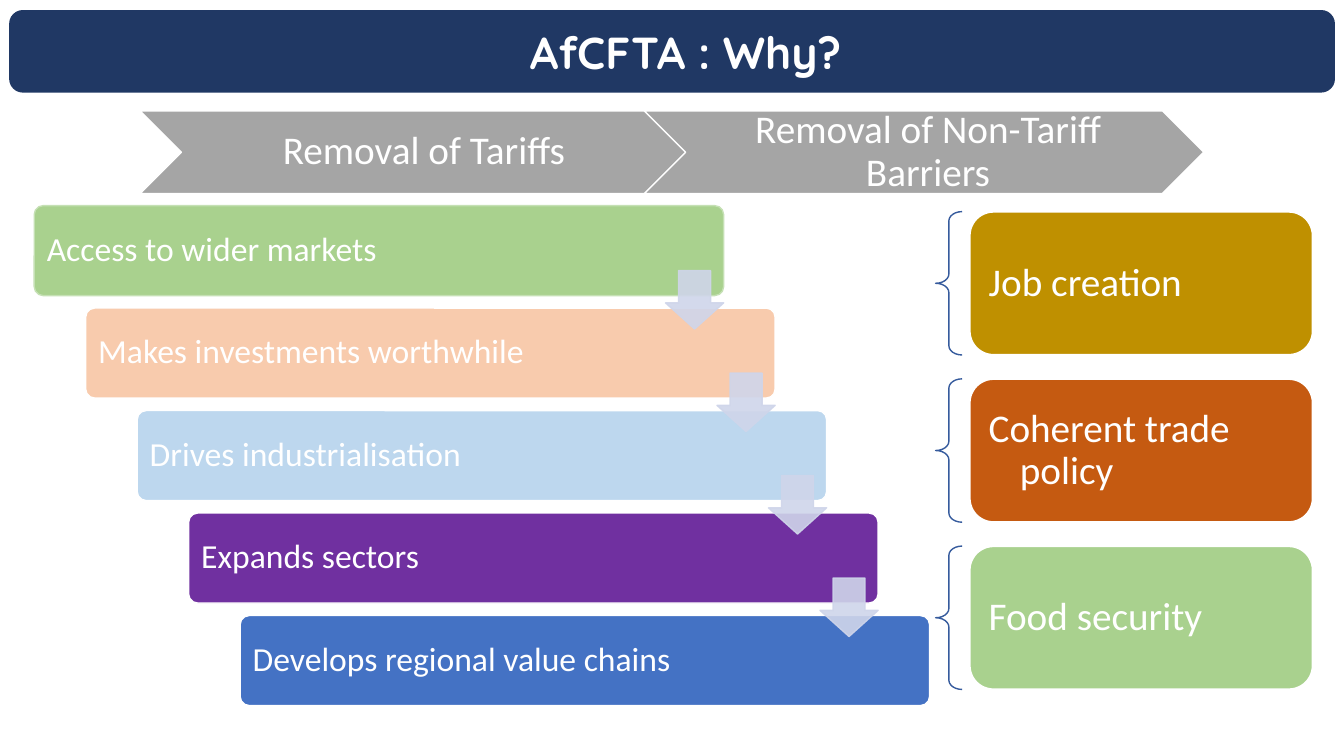
from pptx import Presentation
from pptx.dml.color import RGBColor
from pptx.enum.shapes import MSO_SHAPE
from pptx.enum.text import MSO_ANCHOR, PP_ALIGN
from pptx.oxml.ns import qn
from pptx.util import Inches, Pt
from lxml import etree

ROUND = MSO_SHAPE.ROUNDED_RECTANGLE
CHEVRON = MSO_SHAPE.CHEVRON
ARROW = MSO_SHAPE.DOWN_ARROW
BRACE = MSO_SHAPE.LEFT_BRACE
MIDDLE = MSO_ANCHOR.MIDDLE
LEFT, CENTER = PP_ALIGN.LEFT, PP_ALIGN.CENTER

WHITE = RGBColor(0xFF, 0xFF, 0xFF)
NAVY = RGBColor(0x20, 0x38, 0x64)
GRAY = RGBColor(0xA5, 0xA5, 0xA5)
GREEN = RGBColor(0xA9, 0xD1, 0x8E)
MINT = RGBColor(0xC5, 0xE0, 0xB4)
PEACH = RGBColor(0xF8, 0xCB, 0xAD)
SKY = RGBColor(0xBD, 0xD7, 0xEE)
PURPLE = RGBColor(0x70, 0x30, 0xA0)
BLUE = RGBColor(0x44, 0x72, 0xC4)
PALE = RGBColor(0xCF, 0xD5, 0xEA)
STEEL = RGBColor(0x36, 0x5B, 0x9D)
GOLD = RGBColor(0xBF, 0x90, 0x00)
RUST = RGBColor(0xC5, 0x5A, 0x11)

PAGE = (0, 0, 13.33, 7.5)


def part(box, left, top, width, height):
    """Return the box that takes the given shares of another box."""
    x, y, w, h = box
    return x + left * w, y + top * h, width * w, height * h


def draw(slide, kind, box, fill=None, line=None, weight=1, adjust=(), alpha=None):
    """Add a preset shape with its fill, outline and adjustments."""
    shape = slide.shapes.add_shape(kind, *map(Inches, box))
    shape.shadow.inherit = False
    for i, value in enumerate(adjust):
        shape.adjustments[i] = value
    if fill is None:
        shape.fill.background()
    else:
        shape.fill.solid()
        shape.fill.fore_color.rgb = fill
    if line is None:
        shape.line.fill.background()
    else:
        shape.line.color.rgb = line
        shape.line.width = Pt(weight)
    if alpha:
        for color in shape._element.spPr.iter(qn("a:srgbClr")):
            etree.SubElement(color, qn("a:alpha")).set("val", str(alpha * 1000))
    return shape


def write(shape, text, size=24, font="Calibri", bold=False, align=LEFT,
          inset=(0.1, 0.1, 0.1, 0.1), indent=(0, 0), spacing=0.9):
    """Put one formatted paragraph into a shape."""
    frame = shape.text_frame
    frame.word_wrap = True
    frame.vertical_anchor = MIDDLE
    (frame.margin_left, frame.margin_top,
     frame.margin_right, frame.margin_bottom) = map(Inches, inset)
    para = frame.paragraphs[0]
    para.alignment = align
    para.line_spacing = spacing
    props = para._p.get_or_add_pPr()
    props.set("marL", str(Inches(indent[0])))
    props.set("indent", str(Inches(indent[1])))
    run = para.add_run()
    run.text = text
    run.font.name = font
    run.font.size = Pt(size)
    run.font.bold = bold
    run.font.color.rgb = WHITE


def add_title(slide, box, text):
    """Draw the title banner."""
    write(draw(slide, ROUND, box, NAVY), text, size=32, font="Quicksand",
          bold=True, align=CENTER, indent=(0.27, 0), spacing=1.0)


def add_steps(slide, box, steps):
    """Draw the staircase of bars with an arrow between each pair."""
    wide, high = 0.77, 0.18
    gaps = len(steps) - 1
    right, down = (1 - wide) / gaps, (1 - high) / gaps
    for i, (text, fill, line) in enumerate(steps):
        bar = draw(slide, ROUND, part(box, i * right, i * down, wide, high),
                   fill, line, adjust=(0.1,))
        write(bar, text)
    tip = 0.065
    for i in range(gaps):
        spot = part(box, wide - tip + i * right, 0.13 + i * down, tip, 0.117)
        draw(slide, ARROW, spot, PALE, PALE, adjust=(0.55, 0.45), alpha=90)


def add_goals(slide, box, goals):
    """Draw the column of cards, each with a brace on its left."""
    high = 0.3
    down = (1 - high) / (len(goals) - 1)
    for i, (text, fill) in enumerate(goals):
        row = part(box, 0, i * down, 1, high)
        draw(slide, BRACE, part(row, 0, 0, 0.07, 1), line=STEEL,
             adjust=(0.35, 0.5))
        card = draw(slide, ROUND, part(row, 0.09, 0, 0.91, 1), fill, WHITE, 1.5)
        write(card, text, size=28, inset=(0.12,) * 4, indent=(0.31, -0.31))


def add_means(slide, box, means):
    """Draw the row of overlapping chevrons."""
    wide = 0.526
    right = (1 - wide) / (len(means) - 1)
    for i, text in enumerate(means):
        shape = draw(slide, CHEVRON, part(box, i * right, 0, wide, 1), GRAY, WHITE)
        write(shape, text, size=28, align=CENTER, inset=(0.12, 0.04, 0.04, 0.04))


def main():
    """Build the slide and save it."""
    deck = Presentation()
    deck.slide_width, deck.slide_height = map(Inches, PAGE[2:])
    slide = deck.slides.add_slide(deck.slide_layouts[6])
    add_title(slide, part(PAGE, 0.0068, 0.0133, 0.9865, 0.1093), "AfCFTA : Why?")
    add_steps(slide, part(PAGE, 0.0255, 0.272, 0.6662, 0.6613), [
        ("Access to wider markets", GREEN, MINT),
        ("Makes investments worthwhile", PEACH, WHITE),
        ("Drives industrialisation", SKY, WHITE),
        ("Expands sectors", PURPLE, WHITE),
        ("Develops regional value chains", BLUE, WHITE),
    ])
    add_goals(slide, part(PAGE, 0.6962, 0.28, 0.2806, 0.632), [
        ("Job creation", GOLD),
        ("Coherent trade policy", RUST),
        ("Food security", GREEN),
    ])
    add_means(slide, part(PAGE, 0.1043, 0.1467, 0.7914, 0.1093),
              ["Removal of Tariffs", "Removal of Non-Tariff Barriers"])
    deck.save("out.pptx")


if __name__ == "__main__":
    main()
